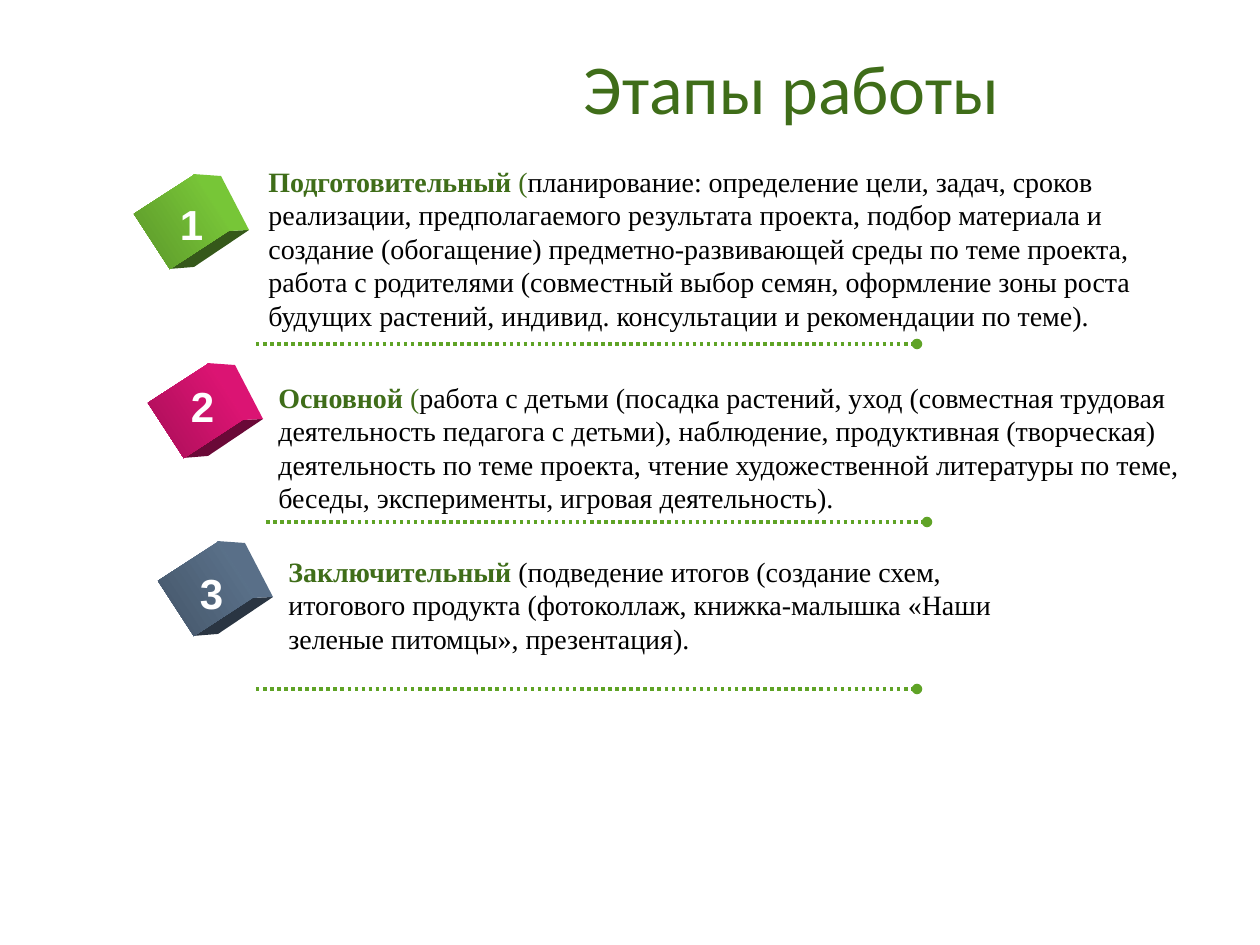
import pptx
import pptx.dml.color
import pptx.enum.dml
import pptx.enum.shapes
import pptx.enum.text
import pptx.oxml
import pptx.oxml.ns
import pptx.util

EMU_PER_PX = 914400 / 126
CUBE_WIDTH, CUBE_HEIGHT, CUBE_TURN = 66, 72, 57
# Side faces, measured from the corner of the unrotated front face
RIGHT_FACE = [(44, -12), (72, -10), (100, 44), (79, 45)]
BOTTOM_FACE = [(20, 83), (45, 81), (100, 44), (79, 45)]

COLORS = {
    "heading": "3F6D19",
    "body": "000000",
    "number": "FFFFFF",
    "rule": "5FA326",
}

STEPS = [
    {
        "number": "1", "number_at": (167, 192), "cube_at": (149, 186),
        "colors": {"light": "7FD13B", "dark": "5B962A", "right": "77C637", "bottom": "35581A"},
        "text_at": (256, 158, 965, 183), "rule_at": (256, 344),
        "spans": [
            ("Подготовительный", "heading", True),
            (" (", "heading", False),
            ("планирование: определение цели, задач, сроков реализации, предполагаемого "
             "результата проекта, подбор материала и создание (обогащение) "
             "предметно-развивающей среды по теме проекта, работа с родителями "
             "(совместный выбор семян, оформление зоны роста будущих растений, индивид. "
             "консультации и рекомендации по теме).", "body", False),
        ],
    },
    {
        "number": "2", "number_at": (178, 374), "cube_at": (163, 375),
        "colors": {"light": "EA157A", "dark": "A70F57", "right": "DB1473", "bottom": "6A0937"},
        "text_at": (266, 374, 965, 149), "rule_at": (266, 522),
        "spans": [
            ("Основной", "heading", True),
            (" (", "heading", False),
            ("работа с детьми (посадка растений, уход (совместная трудовая деятельность "
             "педагога с детьми), наблюдение, продуктивная (творческая) деятельность по "
             "теме проекта, чтение художественной литературы по теме, беседы, "
             "эксперименты, игровая деятельность).", "body", False),
        ],
    },
    {
        "number": "3", "number_at": (187, 561), "cube_at": (173, 553),
        "colors": {"light": "5F7791", "dark": "445568", "right": "596F88", "bottom": "2A3542"},
        "text_at": (276, 548, 767, 149), "rule_at": (256, 689),
        "spans": [
            ("Заключительный ", "heading", True),
            ("(подведение итогов (создание схем, итогового продукта (фотоколлаж, "
             "книжка-малышка «Наши зеленые питомцы», презентация).", "body", False),
        ],
    },
]


def px(length):
    return pptx.util.Emu(round(length * EMU_PER_PX))


def rgb(color):
    return pptx.dml.color.RGBColor.from_string(color)


def add_text(page, at, spans, font="Times New Roman", size=16, center=False,
             middle=False, wrap=True):
    """Add a one-paragraph box; each span is (text, colour name, bold)."""
    box = page.shapes.add_textbox(*map(px, at))
    frame = box.text_frame
    frame.word_wrap = wrap
    if middle:
        frame.vertical_anchor = pptx.enum.text.MSO_ANCHOR.MIDDLE
    para = frame.paragraphs[0]
    if center:
        para.alignment = pptx.enum.text.PP_ALIGN.CENTER
    for text, color, bold in spans:
        span = para.add_run()
        span.text = text
        span.font.name = font
        span.font.size = pptx.util.Pt(size)
        span.font.bold = bold
        span.font.color.rgb = rgb(COLORS[color])


def add_face(page, left, top, corners, color):
    points = [(left + x, top + y) for x, y in corners]
    builder = page.shapes.build_freeform(*points[0], scale=EMU_PER_PX)
    builder.add_line_segments(points[1:], close=True)
    face = builder.convert_to_shape()
    face.shadow.inherit = False
    face.fill.solid()
    face.fill.fore_color.rgb = rgb(color)
    face.line.fill.background()


def add_cube(page, left, top, colors):
    add_face(page, left, top, BOTTOM_FACE, colors["bottom"])
    add_face(page, left, top, RIGHT_FACE, colors["right"])
    front = page.shapes.add_shape(
        pptx.enum.shapes.MSO_SHAPE.RECTANGLE,
        *map(px, (left, top, CUBE_WIDTH, CUBE_HEIGHT)))
    front.rotation = CUBE_TURN
    front.shadow.inherit = False
    front.line.fill.background()
    front.fill.gradient()
    front.fill.gradient_angle = 270
    for stop, shade, position in zip(front.fill.gradient_stops, ("light", "dark"), (0, 1)):
        stop.color.rgb = rgb(colors[shade])
        stop.position = position


def add_rule(page, left, top, width=661):
    """Add a dotted line that ends in a round dot."""
    rule = page.shapes.add_connector(
        pptx.enum.shapes.MSO_CONNECTOR.STRAIGHT,
        px(left), px(top), px(left + width), px(top))
    rule.line.color.rgb = rgb(COLORS["rule"])
    rule.line.width = pptx.util.Pt(2)
    rule.line.dash_style = pptx.enum.dml.MSO_LINE.ROUND_DOT
    tail = pptx.oxml.parse_xml(
        f'<a:tailEnd {pptx.oxml.ns.nsdecls("a")} type="oval"/>')
    rule.line._get_or_add_ln().append(tail)
    rule._element.spPr.append(
        pptx.oxml.parse_xml(f'<a:effectLst {pptx.oxml.ns.nsdecls("a")}/>'))


def add_step(page, step):
    add_rule(page, *step["rule_at"])
    add_cube(page, *step["cube_at"], step["colors"])
    add_text(page, step["text_at"], step["spans"])
    add_text(page, (*step["number_at"], 49, 63), [(step["number"], "number", True)],
             font="Arial", size=24, center=True, wrap=False)


def main():
    deck = pptx.Presentation()
    deck.slide_width, deck.slide_height = px(1260), px(945)
    page = deck.slides.add_slide(deck.slide_layouts[6])
    add_text(page, (323, 16, 937, 141), [("Этапы работы", "heading", False)],
             font="Calibri", size=40, center=True, middle=True)
    for step in STEPS:
        add_step(page, step)
    deck.save("out.pptx")


if __name__ == "__main__":
    main()
